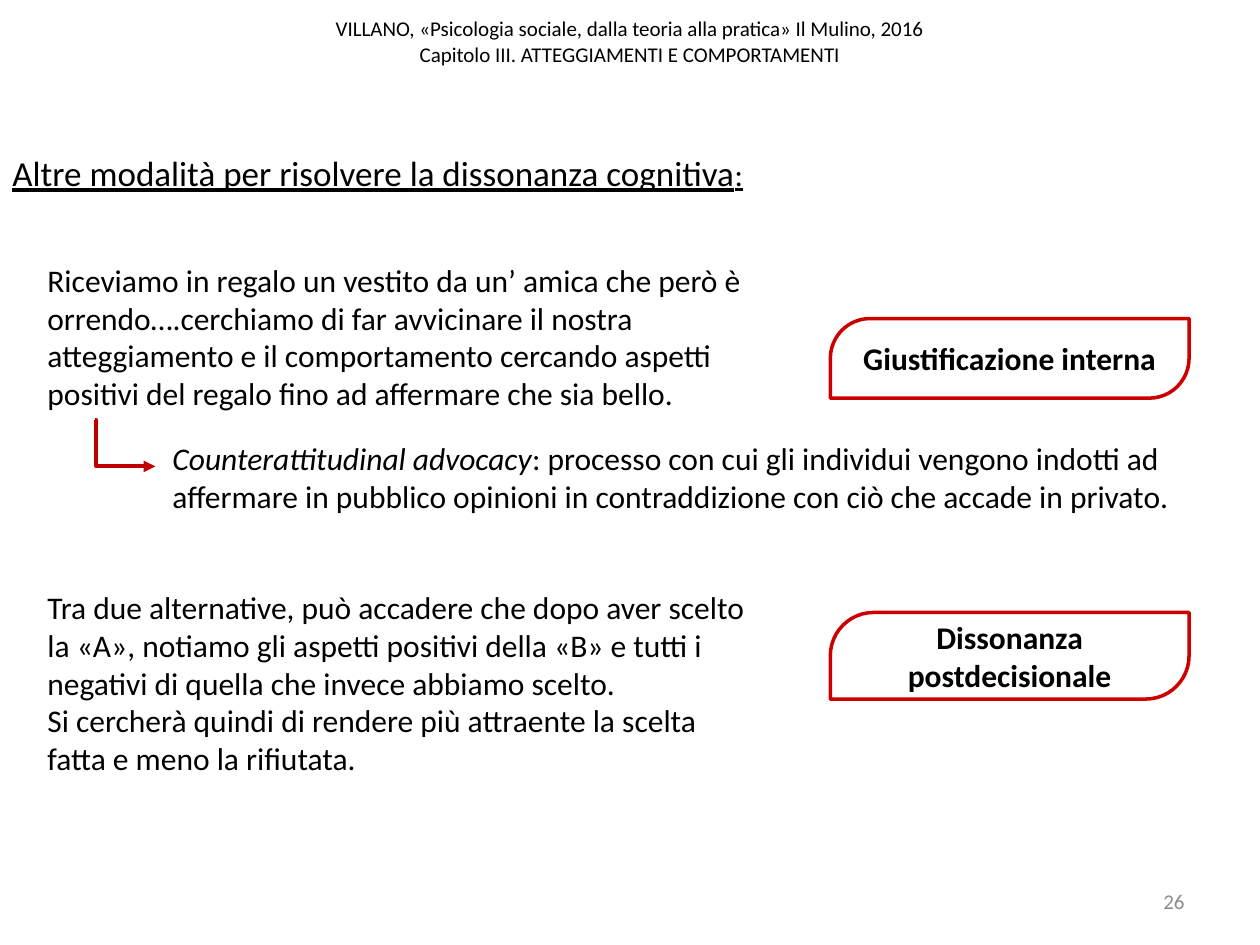
"""Build the slide on further ways of resolving cognitive dissonance."""
from lxml import etree
from pptx import Presentation
from pptx import util as u
from pptx.dml.color import RGBColor
from pptx.enum import shapes, text
from pptx.oxml.ns import qn


def color(value):
    return RGBColor.from_string(value)


def write(shape, content, size=18, fill="000000", align=text.PP_ALIGN.LEFT, anchor=text.MSO_ANCHOR.TOP):
    frame = shape.text_frame
    frame.text = content
    frame.word_wrap = True
    frame.vertical_anchor = anchor
    for paragraph in frame.paragraphs:
        paragraph.alignment = align
        for run in paragraph.runs:
            run.font.name = "Calibri"
            run.font.size = u.Pt(size)
            run.font.color.rgb = color(fill)
    return frame


presentation = Presentation()
presentation.slide_width = u.Pt(720)
presentation.slide_height = u.Pt(540)
slide = presentation.slides.add_slide(presentation.slide_layouts[6])

header = slide.shapes.add_textbox(u.Pt(0), u.Pt(-8), u.Pt(720), u.Pt(63))
write(
    header,
    "VILLANO, «Psicologia sociale, dalla teoria alla pratica» Il Mulino, 2016\v"
    "Capitolo III. ATTEGGIAMENTI E COMPORTAMENTI",
    12, align=text.PP_ALIGN.CENTER, anchor=text.MSO_ANCHOR.MIDDLE,
)

number = slide.shapes.add_textbox(u.Pt(516), u.Pt(500.5), u.Pt(168), u.Pt(28.75))
write(number, "26", 12, "8C8C8C", text.PP_ALIGN.RIGHT, text.MSO_ANCHOR.MIDDLE)

heading = slide.shapes.add_textbox(u.Pt(0), u.Pt(83), u.Pt(436), u.Pt(31.5))
heading_frame = write(heading, "Altre modalità per risolvere la dissonanza cognitiva", 20)
heading_frame.word_wrap = False
heading_frame.paragraphs[0].add_run().text = ":"
for run, size in zip(heading_frame.paragraphs[0].runs, (20, 18)):
    run.font.name = "Calibri"
    run.font.size = u.Pt(size)
    run.font.color.rgb = color("000000")
    run.font.underline = True

examples = [
    (145.5, 439, 94.5,
     "Riceviamo in regalo un vestito da un’ amica che però è orrendo….cerchiamo di far avvicinare "
     "il nostra atteggiamento e il comportamento cercando aspetti positivi del regalo fino ad "
     "affermare che sia bello."),
    (332.5, 417, 116.5,
     "Tra due alternative, può accadere che dopo aver scelto la «A», notiamo gli aspetti positivi "
     "della «B» e tutti i negativi di quella che invece abbiamo scelto.\n"
     "Si cercherà quindi di rendere più attraente la scelta fatta e meno la rifiutata."),
]
for top, width, height, content in examples:
    example = slide.shapes.add_textbox(u.Pt(20), u.Pt(top), u.Pt(width), u.Pt(height))
    write(example, content)

advocacy = slide.shapes.add_textbox(u.Pt(91.5), u.Pt(247.5), u.Pt(592.5), u.Pt(51))
advocacy_frame = write(advocacy, "Counterattitudinal advocacy")
advocacy_frame.paragraphs[0].runs[0].font.italic = True
definition = advocacy_frame.paragraphs[0].add_run()
definition.text = (
    ": processo con cui gli individui vengono indotti ad affermare in pubblico "
    "opinioni in contraddizione con ciò che accade in privato."
)
definition.font.name = "Calibri"
definition.font.size = u.Pt(18)
definition.font.color.rgb = color("000000")

labels = [
    (182, 45.5, "Giustificazione interna"),
    (350, 49.5, "Dissonanza postdecisionale"),
]
for top, height, content in labels:
    label = slide.shapes.add_shape(
        shapes.MSO_SHAPE.ROUND_2_DIAG_RECTANGLE, u.Pt(474.5), u.Pt(top), u.Pt(205), u.Pt(height)
    )
    label.adjustments[0] = 0.5
    label.adjustments[1] = 0
    label.shadow.inherit = False
    label.fill.background()
    label.line.color.rgb = color("CC0000")
    label.line.width = u.Pt(2)
    frame = write(label, content, align=text.PP_ALIGN.CENTER, anchor=text.MSO_ANCHOR.MIDDLE)
    frame.paragraphs[0].runs[0].font.bold = True

arrow = slide.shapes.add_connector(
    shapes.MSO_CONNECTOR.ELBOW, u.Pt(54.25), u.Pt(240), u.Pt(88.75), u.Pt(266.5)
)
arrow.line.color.rgb = color("C00000")
arrow.line.width = u.Pt(2.25)
properties = arrow._element.spPr
etree.SubElement(properties.find(qn("a:ln")), qn("a:tailEnd"), type="triangle")
etree.SubElement(properties, qn("a:effectLst"))
geometry = properties.find(qn("a:prstGeom"))
adjustments = geometry.find(qn("a:avLst"))
etree.SubElement(adjustments, qn("a:gd"), name="adj1", fmla="val 2300")

presentation.save("out.pptx")
